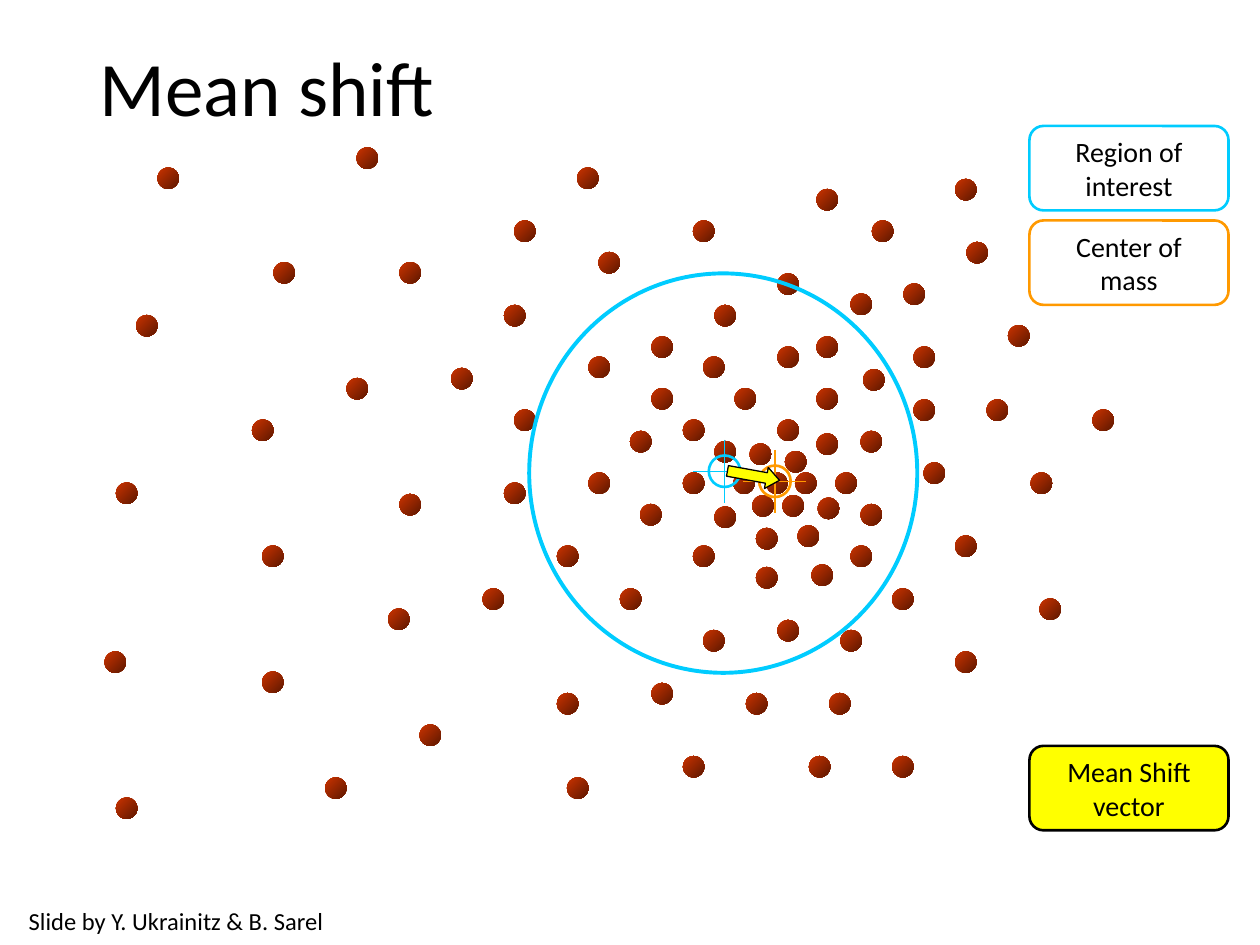
import pptx
import pptx.util
import pptx.dml.color
import pptx.enum.shapes
import pptx.enum.text
import pptx.oxml.ns
from lxml import etree

Inches = pptx.util.Inches
Pt = pptx.util.Pt
RGBColor = pptx.dml.color.RGBColor
Shape = pptx.enum.shapes.MSO_SHAPE
Anchor = pptx.enum.text.MSO_ANCHOR
Align = pptx.enum.text.PP_ALIGN

BLACK = RGBColor(0x00, 0x00, 0x00)
CYAN = RGBColor(0x00, 0xCC, 0xFF)
ORANGE = RGBColor(0xFF, 0x99, 0x00)
YELLOW = RGBColor(0xFF, 0xFF, 0x00)
RUST = RGBColor(0xCC, 0x33, 0x00)
DARK_RUST = RGBColor(0x5E, 0x18, 0x00)

DOT_SIZE = 0.17
DOTS = [
    (6.08, 3.75), (6.31, 3.75), (6.23, 3.58), (5.95, 3.52), (6.21, 3.93),
    (5.97, 3.93), (6.49, 3.95), (5.82, 3.75), (6.63, 3.75), (6.48, 3.44),
    (6.17, 3.33), (6.33, 4.17), (6, 4.19), (5.67, 4.02), (5.42, 3.75),
    (5.67, 3.5), (6.83, 4), (6.75, 4.33), (6.44, 4.48), (6, 4.5),
    (5.5, 4.33), (5.08, 4), (5, 3.42), (5.42, 3.33), (5.83, 3.08),
    (6.48, 3.08), (6.17, 2.75), (5.17, 3.08), (5.58, 2.83), (6.17, 2.17),
    (5.67, 2.42), (6.48, 2.67), (6.48, 1.5), (6.75, 2.33), (6.85, 2.93),
    (6.83, 3.42), (7.25, 3.17), (7.25, 2.75), (7.17, 2.25), (6.92, 1.75),
    (7.58, 1.42), (7.67, 1.92), (8, 2.58), (7.33, 3.67), (7.83, 3.17),
    (8.67, 3.25), (7.58, 4.25), (8.18, 3.75), (7.08, 4.67), (8.25, 4.75),
    (7.58, 5.17), (6.67, 5), (6.17, 4.92), (6.58, 5.5), (7.08, 6),
    (6.42, 6), (5.92, 5.5), (5.58, 5), (4.92, 4.67), (5.17, 5.42),
    (5.42, 6), (4.5, 6.17), (4.42, 5.5), (3.83, 4.67), (4.42, 4.33),
    (4.67, 3.75), (4.08, 3.25), (4.67, 2.83), (5.17, 2.67), (4.75, 2),
    (5.5, 1.75), (4.58, 1.33), (4.08, 1.75), (4, 2.42), (3.58, 2.92),
    (4, 3.83), (3.17, 3.92), (3.08, 4.83), (3.33, 5.75), (2.58, 6.17),
    (2.08, 5.33), (2.08, 4.33), (2.75, 3), (3.17, 2.08), (2.17, 2.08),
    (2, 3.33), (0.83, 5.17), (0.92, 6.33), (0.92, 3.83), (1.08, 2.5),
    (1.25, 1.33), (2.83, 1.17),
]


class Diagram:
    font_name = "Calibri"

    def __init__(self, page):
        self.page = page

    def shape(self, kind, left, top, width, height, line=None, weight=1.5, fill=None):
        item = self.page.shapes.add_shape(
            kind, Inches(left), Inches(top), Inches(width), Inches(height))
        item.shadow.inherit = False
        if fill is None:
            item.fill.background()
        else:
            item.fill.solid()
            item.fill.fore_color.rgb = fill
        if line is None:
            item.line.fill.background()
        else:
            item.line.color.rgb = line
            item.line.width = Pt(weight)
        return item

    def dot(self, left, top):
        ball = self.shape(Shape.OVAL, left, top, DOT_SIZE, DOT_SIZE)
        ball.fill.gradient()
        ball.fill.gradient_angle = 315
        for stop, color, position in zip(ball.fill.gradient_stops, (RUST, DARK_RUST), (0, 1)):
            stop.color.rgb = color
            stop.position = position

    def line(self, start, end, color):
        stroke = self.page.shapes.add_connector(
            pptx.enum.shapes.MSO_CONNECTOR.STRAIGHT, *map(Inches, start + end))
        stroke.line.color.rgb = color
        stroke.line.width = Pt(0.75)
        etree.SubElement(stroke._element.spPr, pptx.oxml.ns.qn("a:effectLst"))

    def crosshair(self, x, y, color):
        radius, reach = 0.125, 0.25
        self.shape(Shape.OVAL, x - radius, y - radius, 2 * radius, 2 * radius, color)
        self.line((x, y - reach), (x, y + reach), color)
        self.line((x - reach, y), (x + reach, y), color)

    def set_text(self, box, text, size, align=Align.LEFT, spacing=None):
        frame = box.text_frame
        frame.text = text
        frame.vertical_anchor = Anchor.MIDDLE
        for para in frame.paragraphs:
            para.alignment = align
            if spacing:
                para.line_spacing = spacing
            for span in para.runs:
                span.font.name = self.font_name
                span.font.size = Pt(size)
                span.font.color.rgb = BLACK

    def label(self, top, text, line, fill=None):
        box = self.shape(Shape.ROUNDED_RECTANGLE, 8.17, top, 1.58, 0.67, line, fill=fill)
        self.set_text(box, text, 16, Align.CENTER)
        box.text_frame.word_wrap = False

    def text(self, left, top, width, height, text, size, wrap, spacing=None):
        box = self.page.shapes.add_textbox(
            Inches(left), Inches(top), Inches(width), Inches(height))
        self.set_text(box, text, size, spacing=spacing)
        box.text_frame.word_wrap = wrap


def main():
    deck = pptx.Presentation()
    deck.slide_width = Inches(10)
    deck.slide_height = Inches(7.5)
    diagram = Diagram(deck.slides.add_slide(deck.slide_layouts[6]))

    for left, top in DOTS:
        diagram.dot(left, top)
    diagram.shape(Shape.OVAL, 4.2, 2.17, 3.08, 3.17, CYAN, 2.25)
    diagram.crosshair(5.75, 3.74, CYAN)
    diagram.label(1, "Region of\ninterest", CYAN)
    diagram.label(1.75, "Center of\nmass", ORANGE)
    diagram.label(5.92, "Mean Shift\nvector", BLACK, YELLOW)
    diagram.crosshair(6.15, 3.82, ORANGE)

    arrow = diagram.shape(Shape.RIGHT_ARROW, 5.77, 3.69, 0.42, 0.17, BLACK, 0.75, YELLOW)
    arrow.adjustments[1] = 0.625
    arrow.rotation = 10.3

    diagram.text(0.13, 7.14, 2.87, 0.33, "Slide by Y. Ukrainitz & B. Sarel", 14, False)
    diagram.text(0.69, 0, 8.62, 1.45, "Mean shift", 44, True, 0.9)
    deck.save("out.pptx")


if __name__ == "__main__":
    main()
